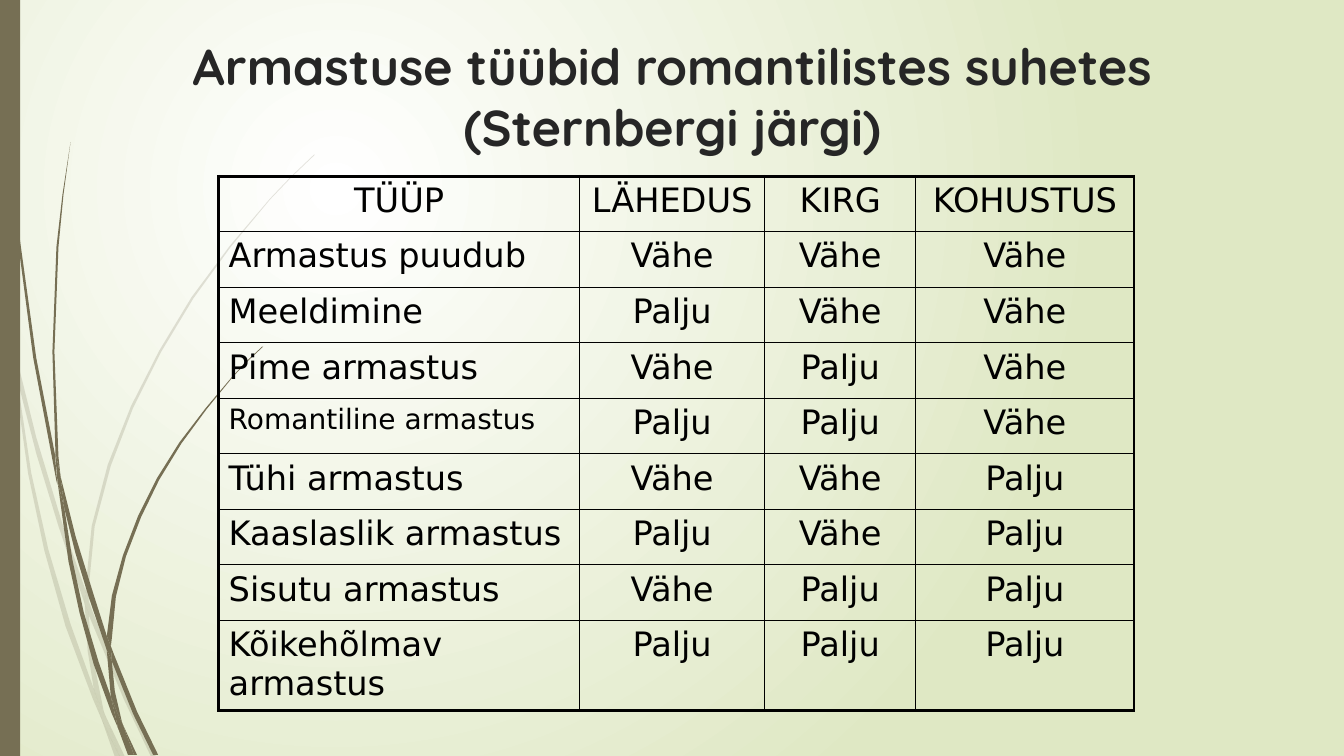
from lxml import etree
from pptx import Presentation
from pptx.dml.color import RGBColor
from pptx.enum.shapes import MSO_SHAPE
from pptx.enum.text import MSO_ANCHOR, MSO_AUTO_SIZE, PP_ALIGN
from pptx.oxml import parse_xml
from pptx.oxml.ns import nsdecls, qn
from pptx.util import Cm, Pt

CENTER, LEFT = PP_ALIGN.CENTER, PP_ALIGN.LEFT
RECTANGLE = MSO_SHAPE.RECTANGLE
TOP = MSO_ANCHOR.TOP
NO_AUTOFIT = MSO_AUTO_SIZE.NONE
TITLE_ONLY = 5

COLORS = {"olive": "766F54", "title": "262626", "black": "000000",
          "white": "FFFFFF", "lime": "DFE8C4"}

# Corners of the pieces of grass as (x, y), counted in grass units.
GRASS_UNIT = Cm(0.0254)
PALE_GRASS = [
    [(11, 350), (9, 322), (0, 282), (0, 299), (10, 344)],
    [(58, 522), (84, 599), (85, 586), (62, 520), (36, 434), (14, 345),
     (17, 376), (36, 450)],
    [(92, 607), (88, 596), (88, 610), (123, 694), (150, 751), (155, 751),
     (127, 692)],
    [(119, 751), (124, 751), (105, 711)],
    [(93, 683), (70, 619), (48, 545), (31, 469), (17, 376), (11, 350),
     (28, 470), (44, 546), (65, 621), (92, 693), (101, 714), (99, 707)],
    [(84, 599), (87, 646), (93, 683), (96, 692), (105, 711), (103, 706),
     (91, 646), (88, 610), (88, 608)],
    [(88, 584), (94, 522), (110, 462), (132, 405), (160, 349), (192, 296),
     (229, 245), (268, 198), (290, 175), (312, 154), (312, 153), (289, 175),
     (268, 197), (228, 244), (190, 295), (158, 348), (130, 403), (107, 461),
     (91, 522), (85, 584), (85, 586), (88, 596)],
    [(101, 714), (114, 751), (119, 751)],
    [(88, 608), (88, 610), (88, 596), (85, 586), (84, 599)],
    [(96, 692), (93, 683), (99, 707), (101, 714), (119, 751), (105, 711)],
]
DARK_GRASS = [
    [(7, 110), (17, 233), (33, 355), (56, 477), (57, 481), (55, 457),
     (55, 453), (36, 355), (19, 232), (8, 109), (5, 48), (4, 0), (3, 0),
     (4, 48)],
    [(88, 592), (106, 645), (106, 633), (106, 631), (93, 590), (75, 532),
     (60, 472), (64, 505), (75, 549)],
    [(113, 649), (110, 641), (111, 656), (132, 708), (152, 749), (157, 749),
     (136, 706)],
    [(110, 691), (98, 657), (83, 607), (72, 556), (64, 505), (57, 477),
     (68, 557), (79, 608), (93, 659), (111, 708), (117, 722), (116, 717)],
    [(60, 472), (58, 453), (54, 349), (58, 245), (63, 193), (70, 141),
     (62, 193), (56, 245), (52, 349), (55, 449)],
    [(133, 749), (136, 749), (122, 719)],
    [(57, 477), (64, 505), (60, 472), (55, 449), (55, 453)],
    [(111, 633), (115, 592), (125, 552), (140, 513), (158, 476), (180, 440),
     (205, 406), (231, 374), (245, 359), (261, 344), (260, 344), (245, 358),
     (231, 373), (204, 405), (178, 439), (156, 474), (137, 512), (122, 551),
     (111, 591), (106, 631), (110, 641)],
    [(117, 722), (127, 749), (131, 749)],
    [(106, 645), (110, 691), (116, 706), (122, 719), (121, 716), (114, 686),
     (111, 656), (109, 651)],
    [(106, 645), (109, 651), (111, 656), (110, 641), (106, 631), (106, 633)],
    [(116, 706), (110, 691), (116, 717), (117, 722), (130, 749), (133, 749),
     (122, 719)],
]

HEADINGS = ["TÜÜP", "LÄHEDUS", "KIRG", "KOHUSTUS"]
LOVE_TYPES = [
    ("Armastus puudub", "Vähe", "Vähe", "Vähe"),
    ("Meeldimine", "Palju", "Vähe", "Vähe"),
    ("Pime armastus", "Vähe", "Palju", "Vähe"),
    ("Romantiline armastus", "Palju", "Palju", "Vähe"),
    ("Tühi armastus", "Vähe", "Vähe", "Palju"),
    ("Kaaslaslik armastus", "Palju", "Vähe", "Palju"),
    ("Sisutu armastus", "Vähe", "Palju", "Palju"),
    ("Kõikehõlmav armastus", "Palju", "Palju", "Palju"),
]
SMALLER_TYPE = "Romantiline armastus"
COLUMN_WIDTHS = [9.1, 4.66, 3.81, 5.5]
ROW_HEIGHTS = [1.4] * 8 + [2.28]


def set_background(page):
    stops = "".join(
        f'<a:gs pos="{position}"><a:srgbClr val="{COLORS[name]}"/></a:gs>'
        for position, name in ((0, "white"), (100000, "lime")))
    background = parse_xml(
        f'<p:bg {nsdecls("p", "a")}><p:bgPr><a:gradFill rotWithShape="1">'
        f'<a:gsLst>{stops}</a:gsLst><a:path path="circle">'
        '<a:fillToRect l="50000" t="50000" r="100000" b="100000"/></a:path>'
        '</a:gradFill><a:effectLst/></p:bgPr></p:bg>')
    page.element.cSld.insert(0, background)


def paint(shape, opacity=100):
    shape.shadow.inherit = False
    shape.line.fill.background()
    shape.fill.solid()
    shape.fill.fore_color.rgb = RGBColor.from_string(COLORS["olive"])
    if opacity < 100:
        color = shape.element.spPr.find(".//" + qn("a:srgbClr"))
        etree.SubElement(color, qn("a:alpha"), val=str(opacity * 1000))


def add_grass(page, pieces, opacity):
    tuft = page.shapes.add_group_shape()
    for corners in pieces:
        builder = tuft.shapes.build_freeform(*corners[0], scale=GRASS_UNIT)
        builder.add_line_segments(corners[1:], close=True)
        paint(builder.convert_to_shape(), opacity)


def add_side_bar(page, height):
    paint(page.shapes.add_shape(RECTANGLE, 0, 0, Cm(0.51), height))


def write(paragraph, text, alignment, color, **font_values):
    paragraph.alignment = alignment
    span = paragraph.add_run()
    span.text = text
    span.font.color.rgb = RGBColor.from_string(COLORS[color])
    for name, value in font_values.items():
        setattr(span.font, name, value)


def fill_title(page, text):
    title = page.shapes.title
    place = {"left": Cm(1.7), "top": Cm(0.77),
             "width": Cm(30.48), "height": Cm(3.18)}
    for name, value in place.items():
        setattr(title, name, value)
    frame = title.text_frame
    frame.auto_size = NO_AUTOFIT
    frame.vertical_anchor = TOP
    write(frame.paragraphs[0], text, CENTER, "title",
          name="Quicksand", size=Pt(36), bold=True)


def set_borders(cell, outer_sides):
    """Draw all four borders, thicker on the sides at the table's edge."""
    properties = cell._tc.get_or_add_tcPr()
    for position, side in enumerate("LRTB"):
        width = Pt(2.25) if side in outer_sides else Pt(1)
        properties.insert(position, parse_xml(
            f'<a:ln{side} {nsdecls("a")} w="{width}"><a:solidFill>'
            f'<a:srgbClr val="{COLORS["black"]}"/></a:solidFill></a:ln{side}>'))


def add_love_table(page):
    rows = [HEADINGS, *LOVE_TYPES]
    last_row, last_column = len(rows) - 1, len(HEADINGS) - 1
    table = page.shapes.add_table(
        len(rows), len(HEADINGS), Cm(5.51), Cm(4.44),
        Cm(sum(COLUMN_WIDTHS)), Cm(sum(ROW_HEIGHTS))).table
    table.horz_banding = False
    for column, width in zip(table.columns, COLUMN_WIDTHS):
        column.width = Cm(width)
    for row, height in zip(table.rows, ROW_HEIGHTS):
        row.height = Cm(height)
    for r, texts in enumerate(rows):
        for c, text in enumerate(texts):
            cell = table.cell(r, c)
            cell.fill.background()
            edges = {"L": c == 0, "R": c == last_column,
                     "T": r == 0, "B": r == last_row}
            set_borders(cell, [side for side, outer in edges.items() if outer])
            write(cell.text_frame.paragraphs[0], text,
                  LEFT if c == 0 and r > 0 else CENTER, "black",
                  name="DejaVu Sans", bold=False,
                  size=Pt(20 if text == SMALLER_TYPE else 24))


def main():
    deck = Presentation()
    deck.slide_width, deck.slide_height = Cm(33.87), Cm(19.05)
    page = deck.slides.add_slide(deck.slide_layouts[TITLE_ONLY])
    set_background(page)
    add_grass(page, PALE_GRASS, 20)
    add_grass(page, DARK_GRASS, 100)
    add_side_bar(page, deck.slide_height)
    fill_title(page, "Armastuse tüübid romantilistes suhetes (Sternbergi järgi)")
    add_love_table(page)
    deck.save("out.pptx")


if __name__ == "__main__":
    main()
